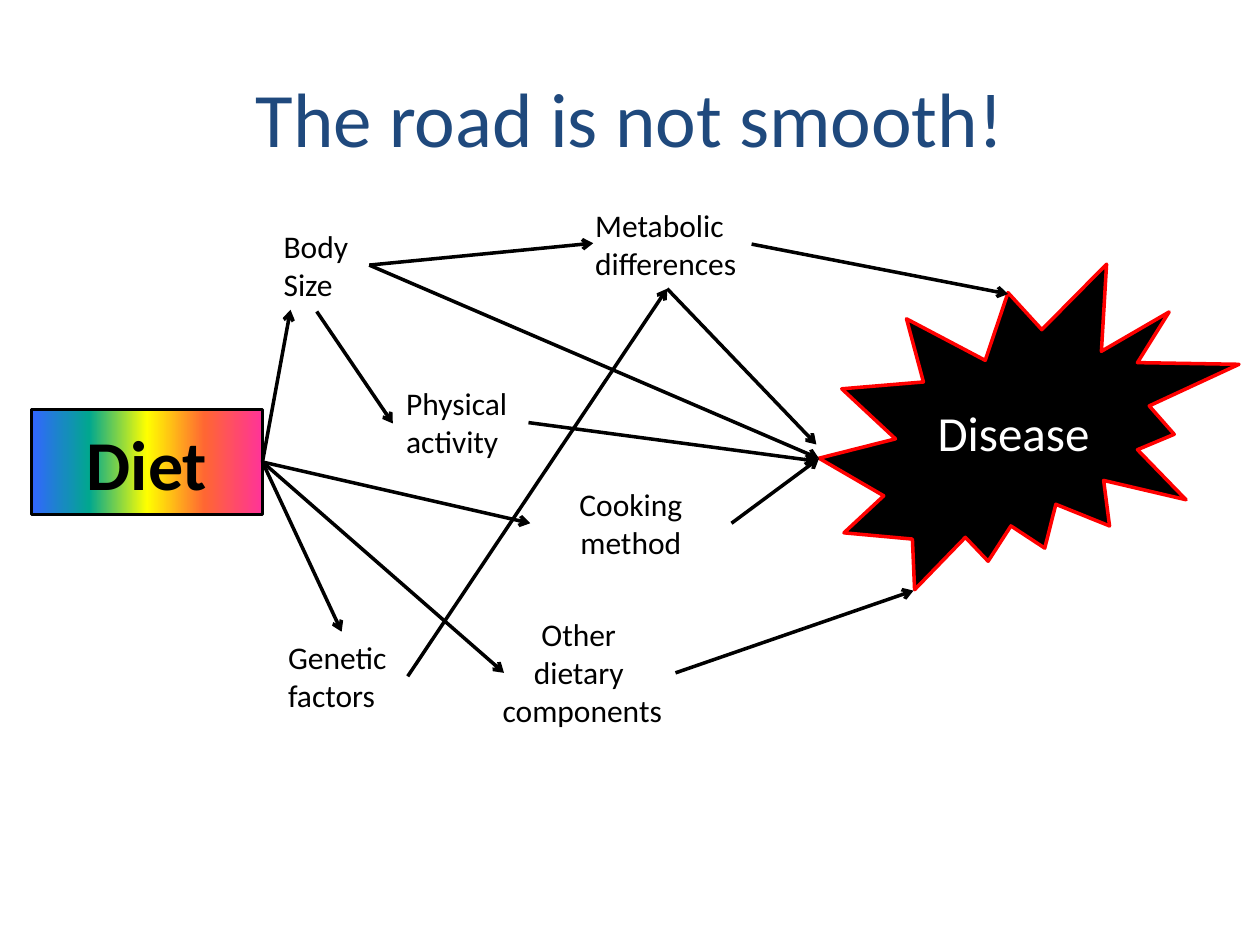
from dataclasses import dataclass

from lxml import etree
from pptx import Presentation
from pptx.dml.color import RGBColor
from pptx.enum import shapes, text
from pptx.oxml.ns import qn
from pptx.util import Pt


@dataclass(frozen=True)
class Theme:
    font: str = "Calibri"
    title: str = "1F497D"
    ink: str = "000000"
    paper: str = "FFFFFF"
    alarm: str = "FF0000"
    rainbow: tuple = ("3366FF", "01A78F", "FFFF00", "FF6633", "FF3399")
    title_size: int = 44
    diet_size: int = 40
    disease_size: int = 28
    label_size: int = 18
    line_width: int = 2


THEME = Theme()
LEFT, CENTER = text.PP_ALIGN.LEFT, text.PP_ALIGN.CENTER

TITLE = ("The road is not smooth!", (36, 21.5, 648, 90))
DIET = ("Diet", (18, 234, 132, 60))
DISEASE = ("Disease", (468, 151, 240, 186))

# name: (lines, (left, top, width, height), alignment, wraps)
FACTORS = {
    "body": (["Body", "Size"], (155, 126, 56, 51), LEFT, False),
    "activity": (["Physical", "activity"], (225, 216, 77, 51), LEFT, False),
    "metabolism": (["Metabolic", "differences"], (333, 114, 96.5, 51), LEFT, False),
    "cooking": (["Cooking method"], (303, 273.5, 115, 51), CENTER, True),
    "other": (["Other ", "dietary ", "components"], (279.5, 348, 106.5, 73), CENTER, False),
    "genes": (["Genetic", "factors"], (157.5, 361, 75.5, 51), LEFT, False),
}

# An arrow end is a (name, side) pair or an (x, y) point.
DIET_END = ("diet", "right")
DISEASE_TIP = (468, 262)
ARROWS = [
    (DIET_END, (166, 177)),
    (DIET_END, ("cooking", "left")),
    (DIET_END, (288, 384.5)),
    (DIET_END, ("genes", "top")),
    (("body", "right"), DISEASE_TIP),
    (("body", "right"), (339, 139)),
    ((181, 178), (224.5, 242)),
    (("activity", "right"), (466.5, 263.5)),
    (("metabolism", "right"), (576, 168)),
    (("metabolism", "bottom"), (466.5, 254)),
    (("cooking", "right"), DISEASE_TIP),
    (("other", "right"), (522, 337.5)),
    (("genes", "right"), ("metabolism", "bottom")),
]

SIDES = {"left": (0, 0.5), "right": (1, 0.5), "top": (0.5, 0), "bottom": (0.5, 1)}
AREAS = {"diet": DIET[1], **{name: factor[1] for name, factor in FACTORS.items()}}


def color(value):
    return RGBColor.from_string(value)


def points(values):
    return [Pt(value) for value in values]


def write(frame, lines, size, ink, align=CENTER, bold=False):
    frame.text = "\n".join(lines)
    for para in frame.paragraphs:
        para.alignment = align
        para.font.name = THEME.font
        para.font.size = Pt(size)
        para.font.bold = bold
        para.font.color.rgb = color(ink)


def outline(item, ink):
    item.line.color.rgb = color(ink)
    item.line.width = Pt(THEME.line_width)


def add_node(page, kind, node, size, ink, border, bold=False):
    label, area = node
    shape = page.shapes.add_shape(kind, *points(area))
    shape.shadow.inherit = False
    outline(shape, border)
    shape.text_frame.vertical_anchor = text.MSO_ANCHOR.MIDDLE
    write(shape.text_frame, [label], size, ink, bold=bold)
    return shape


def fill_rainbow(shape):
    """Spread the theme's rainbow evenly from left to right."""
    shape.fill.gradient()
    shape.fill.gradient_angle = 0
    stops = shape.element.spPr.find(".//" + qn("a:gsLst"))
    for stop in list(stops):
        stops.remove(stop)
    step = 100000 // (len(THEME.rainbow) - 1)
    for index, value in enumerate(THEME.rainbow):
        stop = etree.SubElement(stops, qn("a:gs"), pos=str(index * step))
        etree.SubElement(stop, qn("a:srgbClr"), val=value)


def locate(end):
    if end[0] not in AREAS:
        return end
    left, top, width, height = AREAS[end[0]]
    across, down = SIDES[end[1]]
    return left + across * width, top + down * height


def add_arrow(page, start, finish):
    arrow = page.shapes.add_connector(
        shapes.MSO_CONNECTOR.STRAIGHT, *points(locate(start) + locate(finish)))
    outline(arrow, THEME.ink)
    etree.SubElement(arrow.line._get_or_add_ln(), qn("a:tailEnd"), type="arrow")
    etree.SubElement(arrow.element.spPr, qn("a:effectLst"))


def main():
    deck = Presentation()
    deck.slide_width, deck.slide_height = Pt(720), Pt(540)
    page = deck.slides.add_slide(deck.slide_layouts[5])

    heading, area = TITLE
    title = page.shapes.title
    title.left, title.top, title.width, title.height = points(area)
    title.text_frame.vertical_anchor = text.MSO_ANCHOR.MIDDLE
    write(title.text_frame, [heading], THEME.title_size, THEME.title)

    disease = add_node(page, shapes.MSO_SHAPE.EXPLOSION2, DISEASE,
                       THEME.disease_size, THEME.paper, THEME.alarm)
    disease.fill.solid()
    disease.fill.fore_color.rgb = color(THEME.ink)
    diet = add_node(page, shapes.MSO_SHAPE.RECTANGLE, DIET,
                    THEME.diet_size, THEME.ink, THEME.ink, bold=True)
    fill_rainbow(diet)

    for lines, area, align, wraps in FACTORS.values():
        box = page.shapes.add_textbox(*points(area))
        box.text_frame.word_wrap = wraps
        box.text_frame.auto_size = text.MSO_AUTO_SIZE.SHAPE_TO_FIT_TEXT
        write(box.text_frame, lines, THEME.label_size, THEME.ink, align)

    for start, finish in ARROWS:
        add_arrow(page, start, finish)

    deck.save("out.pptx")


if __name__ == "__main__":
    main()
